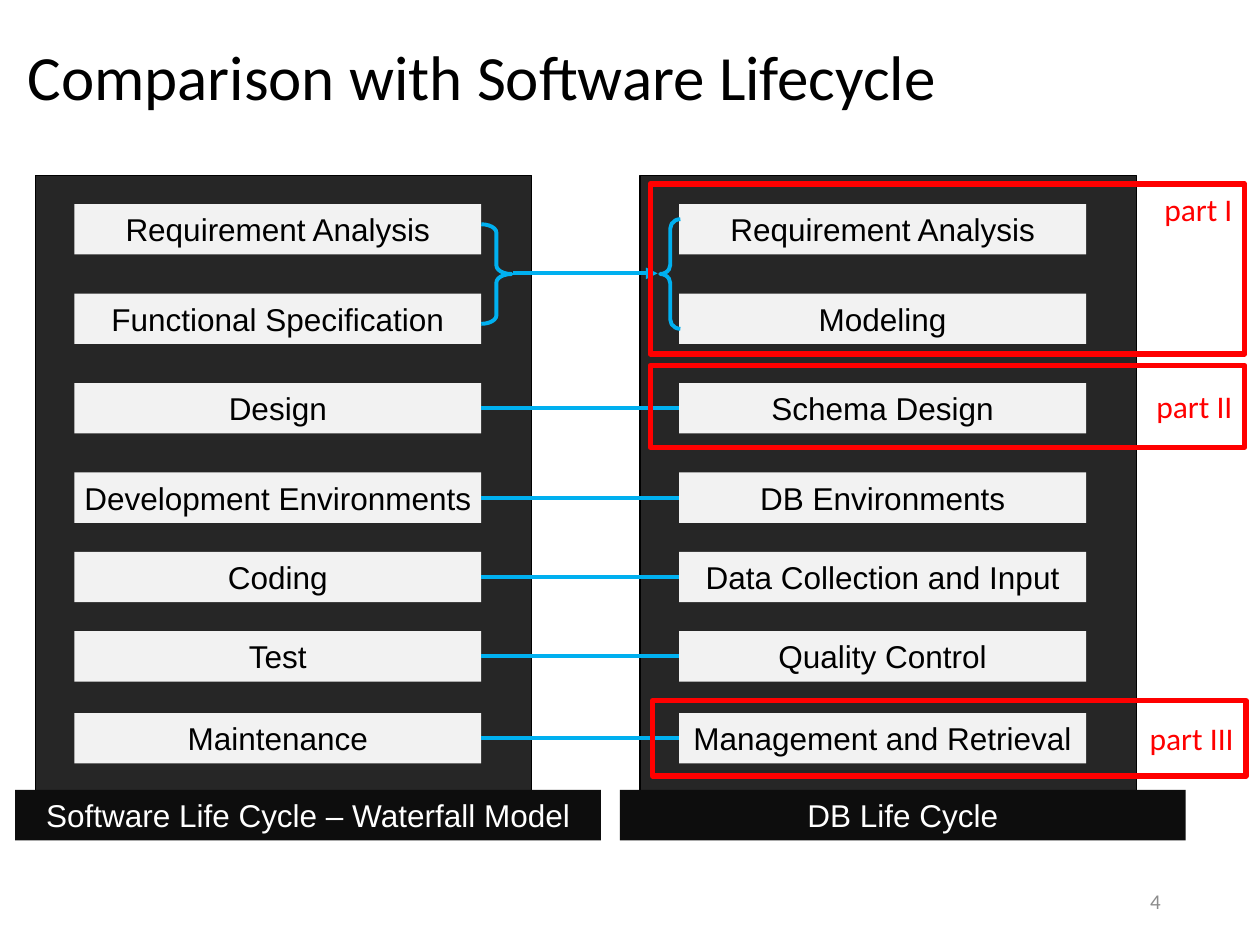
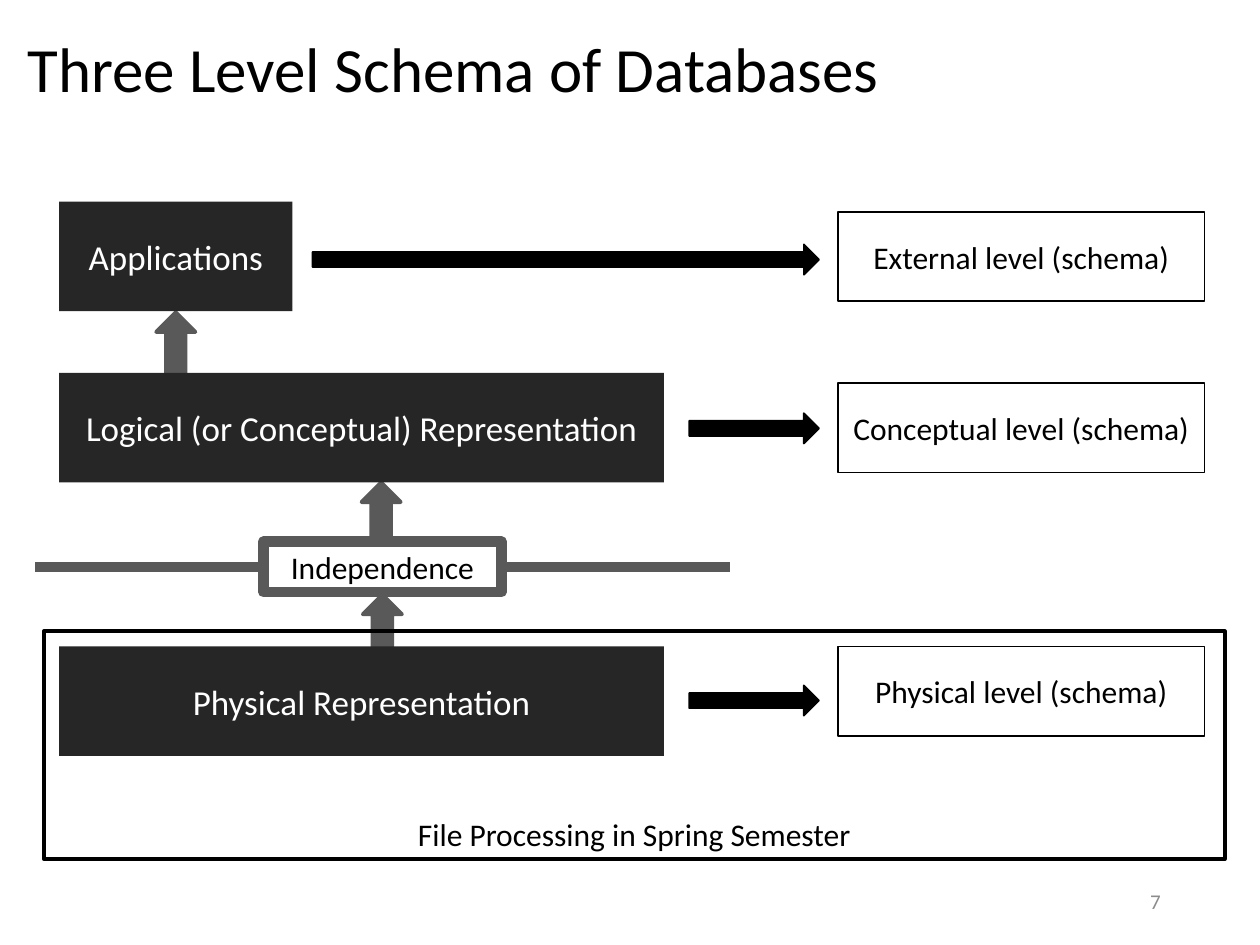
from lxml import etree
from pptx import Presentation
from pptx.dml.color import RGBColor
from pptx.enum.shapes import MSO_CONNECTOR, MSO_SHAPE
from pptx.enum.text import MSO_ANCHOR, PP_ALIGN
from pptx.oxml.ns import qn
from pptx.util import Inches, Pt

RECT = MSO_SHAPE.RECTANGLE
UP_ARROW = MSO_SHAPE.UP_ARROW
RIGHT_ARROW = MSO_SHAPE.RIGHT_ARROW
LEFT_BRACE = MSO_SHAPE.LEFT_BRACE
RIGHT_BRACE = MSO_SHAPE.RIGHT_BRACE
STRAIGHT = MSO_CONNECTOR.STRAIGHT
TOP, MIDDLE, BOTTOM = MSO_ANCHOR.TOP, MSO_ANCHOR.MIDDLE, MSO_ANCHOR.BOTTOM
LEFT, CENTER, RIGHT = PP_ALIGN.LEFT, PP_ALIGN.CENTER, PP_ALIGN.RIGHT

BLACK, WHITE, RED, BLUE = "000000", "FFFFFF", "FF0000", "00B0F0"
PANEL, CAPTION, STEP = "262626", "0D0D0D", "F2F2F2"
GRAY, FOOTER = "595959", "8C8C8C"
BODY, LABEL = "Calibri", "Arial"


def rgb(value):
    return RGBColor.from_string(value)


class Deck:
    def __init__(self):
        self.prs = Presentation()
        self.prs.slide_width = Inches(10)
        self.prs.slide_height = Inches(7.5)
        self.slide = None

    def new_slide(self, title, top, height, number):
        self.slide = self.prs.slides.add_slide(self.prs.slide_layouts[6])
        tf = self.textbox(0.12, top, 9.76, height, title, size=36)
        tf.paragraphs[0].line_spacing = 0.9
        self.textbox(7.06, 6.95, 2.25, 0.4, number, size=12, color=FOOTER, align=RIGHT)

    def set_text(self, sp, text, size=18, color=BLACK, font=BODY, align=CENTER,
                 anchor=MIDDLE, side=0.1):
        tf = sp.text_frame
        tf.word_wrap = True
        tf.vertical_anchor = anchor
        tf.margin_left = tf.margin_right = Inches(side)
        p = tf.paragraphs[0]
        p.text = text
        p.alignment = align
        r = p.runs[0]
        r.font.size = Pt(size)
        r.font.name = font
        r.font.color.rgb = rgb(color)
        return tf

    def textbox(self, x, y, w, h, text, align=LEFT, **style):
        sp = self.slide.shapes.add_textbox(Inches(x), Inches(y), Inches(w), Inches(h))
        return self.set_text(sp, text, align=align, **style)

    def shape(self, kind, x, y, w, h, fill=None, line=None, width=1, text=None,
              adjust=(), **style):
        sp = self.slide.shapes.add_shape(kind, Inches(x), Inches(y), Inches(w), Inches(h))
        sp.shadow.inherit = False
        if fill:
            sp.fill.solid()
            sp.fill.fore_color.rgb = rgb(fill)
        else:
            sp.fill.background()
        if line:
            sp.line.color.rgb = rgb(line)
            sp.line.width = Pt(width)
        else:
            sp.line.fill.background()
        for i, value in enumerate(adjust):
            sp.adjustments[i] = value
        if text:
            self.set_text(sp, text, **style)

    def label(self, x, y, w, text, fill, color):
        self.shape(RECT, x, y, w, 0.4, fill, text=text, color=color, font=LABEL,
                   anchor=TOP, side=0)

    def line(self, x1, x2, y, color, width, arrow=False):
        s = self.slide.shapes.add_connector(STRAIGHT, Inches(x1), Inches(y),
                                            Inches(x2), Inches(y))
        s.line.color.rgb = rgb(color)
        s.line.width = Pt(width)
        props = s.element.spPr
        if arrow:
            etree.SubElement(props.find(qn("a:ln")), qn("a:tailEnd"), type="triangle")
        etree.SubElement(props, qn("a:effectLst"))


def lifecycle_slide(deck):
    deck.new_slide("Comparison with Software Lifecycle", 0.11, 1.05, "4")
    step_tops = [1.62, 2.33, 3.04, 3.75, 4.38, 5.01, 5.66]
    cycles = [
        (0.28, 0.12, 4.65, "Software Life Cycle – Waterfall Model",
         ["Requirement Analysis", "Functional Specification", "Design",
          "Development Environments", "Coding", "Test", "Maintenance"]),
        (5.08, 4.92, 4.49, "DB Life Cycle",
         ["Requirement Analysis", "Modeling", "Schema Design", "DB Environments",
          "Data Collection and Input", "Quality Control", "Management and Retrieval"]),
    ]
    for x, caption_x, caption_w, caption, steps in cycles:
        deck.shape(RECT, x, 1.39, 3.94, 5.12, PANEL, BLACK, 0.75)
        for y, step in zip(step_tops, steps):
            deck.label(x + 0.31, y, 3.23, step, STEP, BLACK)
        deck.label(caption_x, 6.27, caption_w, caption, CAPTION, WHITE)

    deck.line(4.07, 5.22, 2.17, BLUE, 2.25, arrow=True)
    for y in step_tops[2:]:
        deck.line(3.82, 5.39, y + 0.2, BLUE, 2.25)
    deck.shape(RIGHT_BRACE, 3.82, 1.78, 0.24, 0.79, line=BLUE, width=2.25,
               adjust=(0.28, 0.5))
    deck.shape(LEFT_BRACE, 5.24, 1.74, 0.16, 0.87, line=BLUE, width=2.25,
               adjust=(0.46, 0.5))

    parts = [("part I", 5.16, 1.46, 4.72, 1.35, TOP),
             ("part II", 5.16, 2.9, 4.72, 0.65, MIDDLE),
             ("part III", 5.18, 5.56, 4.71, 0.6, MIDDLE)]
    for text, x, y, w, h, anchor in parts:
        deck.shape(RECT, x, y, w, h, line=RED, width=3, text=text, color=RED,
                   align=RIGHT, anchor=anchor)


def schema_slide(deck):
    deck.new_slide("Three Level Schema of Databases", 0.08, 0.99, "7")
    for x, y in [(1.24, 2.48), (2.88, 4.72), (2.87, 3.83)]:
        deck.shape(UP_ARROW, x, y, 0.31, 0.51, GRAY, GRAY, 2.25)
    deck.line(0.28, 5.79, 4.5, GRAY, 6)
    deck.shape(RECT, 2.09, 4.3, 1.89, 0.4, WHITE, GRAY, 6, "Independence", anchor=TOP)

    levels = [
        ("Applications", 1.6, 1.85, "External level (schema)", 1.68, 2.48, 1.94),
        ("Logical (or Conceptual) Representation", 2.96, 4.8,
         "Conceptual level (schema)", 3.04, 5.47, 3.28),
        ("Physical Representation", 5.13, 4.8,
         "Physical level (schema)", 5.13, 5.47, 5.44),
    ]
    for layer, y, w, schema, schema_y, arrow_x, arrow_y in levels:
        deck.shape(RECT, 0.47, y, w, 0.87, PANEL, text=layer, size=20, color=WHITE)
        deck.shape(RECT, 6.65, schema_y, 2.91, 0.71, WHITE, BLACK, text=schema)
        deck.shape(RIGHT_ARROW, arrow_x, arrow_y, 6.5 - arrow_x, 0.24, BLACK, BLACK)
    deck.shape(RECT, 0.35, 5.01, 9.37, 1.81, line=BLACK, width=2.25,
               text="File Processing in Spring Semester", anchor=BOTTOM)


def main():
    deck = Deck()
    lifecycle_slide(deck)
    schema_slide(deck)
    deck.prs.save("out.pptx")


if __name__ == "__main__":
    main()
